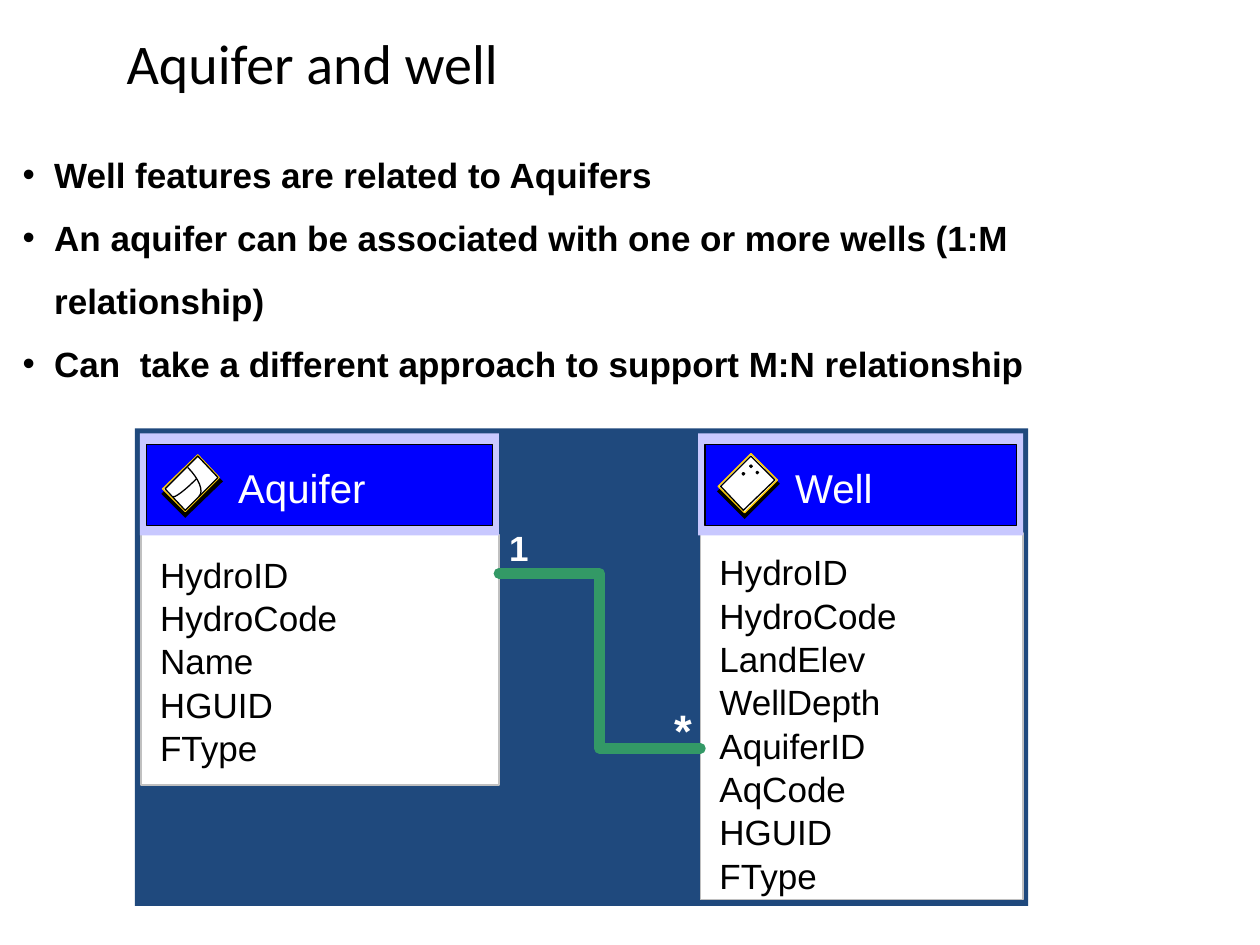
from pptx import Presentation
from pptx.dml.color import RGBColor
from pptx.enum.shapes import MSO_CONNECTOR, MSO_SHAPE
from pptx.enum.text import MSO_ANCHOR, MSO_AUTO_SIZE, PP_ALIGN
from pptx.oxml.ns import qn
from pptx.util import Inches, Pt
from lxml import etree

RECTANGLE = MSO_SHAPE.RECTANGLE
ELBOW = MSO_CONNECTOR.ELBOW
FIT_SHAPE = MSO_AUTO_SIZE.SHAPE_TO_FIT_TEXT
NO_FIT = MSO_AUTO_SIZE.NONE
MIDDLE, TOP = MSO_ANCHOR.MIDDLE, MSO_ANCHOR.TOP
CENTER = PP_ALIGN.CENTER

BLACK = RGBColor(0x00, 0x00, 0x00)
WHITE = RGBColor(0xFF, 0xFF, 0xFF)
NAVY = RGBColor(0x1F, 0x49, 0x7D)
LAVENDER = RGBColor(0xC8, 0xC8, 0xFF)
BLUE = RGBColor(0x00, 0x00, 0xFF)
GRAY = RGBColor(0xC0, 0xC0, 0xC0)
GOLD = RGBColor(0xFF, 0xCC, 0x00)
GREEN = RGBColor(0x33, 0x99, 0x66)

prs = Presentation()
prs.slide_width, prs.slide_height = Inches(10), Inches(7.5)
COL, ROW = prs.slide_width // 100, prs.slide_height // 75
slide = prs.slides.add_slide(prs.slide_layouts[1])
shapes = slide.shapes


def draw(points, fill=None, line=None, closed=True):
    if closed and len(points) == 2:
        (left, top), (width, height) = points
        shape = shapes.add_shape(RECTANGLE, int(left * COL), int(top * ROW),
                                 int(width * COL), int(height * ROW))
    else:
        corners = [(x * COL, y * ROW) for x, y in points]
        builder = shapes.build_freeform(*corners[0])
        builder.add_line_segments(corners[1:], close=closed)
        shape = builder.convert_to_shape()
    shape.shadow.inherit = False
    for paint, color in ((shape.fill, fill), (shape.line.fill, line)):
        if color is None:
            paint.background()
        else:
            paint.solid()
            paint.fore_color.rgb = color
    if line is not None:
        shape.line.width = Pt(0)


def label(text, left, top, width, height, size, color, bold=False):
    box = shapes.add_textbox(int(left * COL), int(top * ROW),
                             int(width * COL), int(height * ROW))
    frame = box.text_frame
    frame.margin_left = frame.margin_right = 0
    frame.margin_top = frame.margin_bottom = 0
    frame.word_wrap = False
    frame.auto_size = FIT_SHAPE
    paragraph = frame.paragraphs[0]
    paragraph.text = text
    font = paragraph.font
    font.name, font.size, font.bold = "Arial", Pt(size), bold
    font.color.rgb = color


title = shapes.title
title.left, title.top = int(3.6 * COL), int(1.5 * ROW)
title.width, title.height = int(42.4 * COL), int(6.8 * ROW)
title.text_frame.auto_size = NO_FIT
title.text_frame.vertical_anchor = MIDDLE
heading = title.text_frame.paragraphs[0]
heading.text = "Aquifer and well"
heading.alignment = CENTER
heading.font.name, heading.font.size = "Calibri", Pt(32)
heading.font.color.rgb = BLACK

notes = slide.placeholders[1]
notes.left, notes.top = int(0.8 * COL), 10 * ROW
notes.width, notes.height = int(97.5 * COL), int(16.2 * ROW)
notes.text_frame.auto_size = NO_FIT
notes.text_frame.vertical_anchor = TOP
notes.text_frame.text = "\n".join([
    "Well features are related to Aquifers",
    "An aquifer can be associated with one or more wells (1:M relationship)",
    "Can  take a different approach to support M:N relationship",
])
for point in notes.text_frame.paragraphs:
    properties = point._p.get_or_add_pPr()
    properties.set("marL", str(Inches(0.25)))
    properties.set("indent", str(Inches(-0.25)))
    etree.SubElement(properties, qn("a:buChar")).set("char", "•")
    point.line_spacing = 1.5
    point.space_before = Pt(0)
    point.font.name, point.font.size, point.font.bold = "Arial", Pt(20), True
    point.font.color.rgb = BLACK

draw([(10.7, 34), (70.9, 37.9)], NAVY)
label("*", 53.5, 55.7, 1.4, 4.4, 26, WHITE, True)

FIELD_WIDTHS = {
    "HydroID": 12.2, "HydroCode": 16.5, "Name": 9.2, "HGUID": 11, "FType": 9.9,
    "LandElev": 13.8, "WellDepth": 15, "AquiferID": 13.8, "AqCode": 12,
}
FIELD_PITCH = 3.44
classes = [
    ("Aquifer", 11.1, 28.5, (11.2, 42.4, 28.4, 19.9), 43.9, 18.9, 12.4,
     ["HydroID", "HydroCode", "Name", "HGUID", "FType"]),
    ("Well", 55.4, 25.8, (55.6, 42.3, 25.6, 29.1), 43.7, 63.1, 8.2,
     ["HydroID", "HydroCode", "LandElev", "WellDepth", "AquiferID", "AqCode",
      "HGUID", "FType"]),
]
for name, left, width, body, first_row, name_left, name_width, fields in classes:
    draw([body[:2], body[2:]], WHITE, GRAY)
    for row, field in enumerate(fields):
        label(field, body[0] + 1.5, first_row + row * FIELD_PITCH,
              FIELD_WIDTHS[field], 4.1, 20, BLACK)
    draw([(left, 34.4), (width, 8.1)], LAVENDER)
    draw([(left + 0.55, 35.3), (width - 1.05, 6.4)], BLUE, BLACK)
    label(name, name_left, 36.8, name_width, 4.7, 23, WHITE)

icon_layers = [
    ([(14.7, 41.1), (17.7, 38.2), (15.7, 36.3), (12.8, 39.2)], BLACK, None),
    ([(14.7, 40.6), (17.4, 37.9), (15.7, 36.1), (12.9, 38.8)], WHITE, GOLD),
    ([(14.7, 40.5), (17.3, 37.9), (15.7, 36.2), (13.1, 38.8)], None, BLACK),
    ([(59.1, 41.2), (61.9, 38.4), (59.7, 36.2), (56.9, 39)], BLACK, None),
    ([(59.1, 40.7), (61.7, 38.1), (59.6, 36), (57, 38.6)], WHITE, GOLD),
    ([(59, 40.5), (61.5, 38.1), (59.6, 36.2), (57.2, 38.6)], None, BLACK),
]
for outline, fill, line in icon_layers:
    draw(outline, fill, line)

aquifer_boundaries = [
    [(14.9, 37.1), (15.8, 38), (16.2, 39), (15.8, 39.4)],
    [(13.7, 39.4), (13.8, 39.6), (14.7, 38.9), (15.6, 38)],
]
for controls in aquifer_boundaries:
    curve = []
    for step in range(9):
        t = step / 8
        weights = ((1 - t) ** 3, 3 * t * (1 - t) ** 2, 3 * t ** 2 * (1 - t), t ** 3)
        curve.append([sum(w * c for w, c in zip(weights, axis))
                      for axis in zip(*controls)])
    draw(curve, line=BLACK, closed=False)

for x, y in ((59, 37.6), (59.6, 37), (60.1, 37.5)):
    draw([(x, y + 0.1), (x + 0.1, y), (x, y - 0.1), (x - 0.1, y)], WHITE, BLACK)

relation = shapes.add_connector(ELBOW, int(39.6 * COL), int(45.5 * ROW),
                                int(55.6 * COL), int(59.4 * ROW))
relation.line.color.rgb = GREEN
relation.line.width = Pt(6)
relation_properties = relation._element.spPr
stroke = relation_properties.find(qn("a:ln"))
stroke.set("cap", "rnd")
etree.SubElement(stroke, qn("a:round"))
etree.SubElement(relation_properties, qn("a:effectLst"))
label("1", 40.4, 41.8, 1.6, 3.4, 20, WHITE, True)

prs.save("out.pptx")
